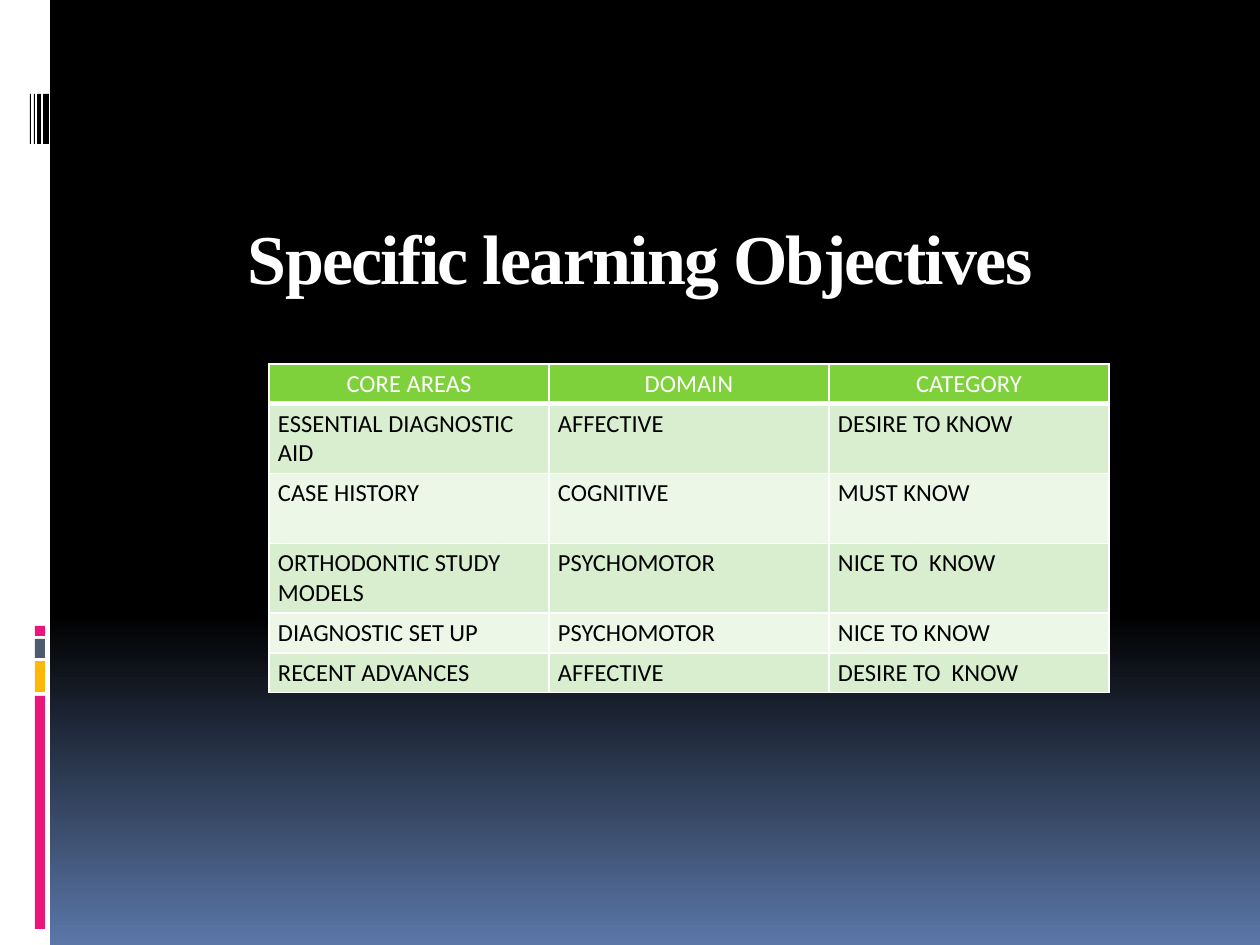
from copy import deepcopy

from lxml.etree import SubElement
from pptx import Presentation
from pptx.dml.color import RGBColor
from pptx.enum.shapes import MSO_SHAPE as Shape
from pptx.enum.text import MSO_ANCHOR as Anchor, PP_ALIGN as Align
from pptx.oxml.ns import qn
from pptx.util import Emu, Pt

PX = 914400 / 126
WHITE = RGBColor(0xFF, 0xFF, 0xFF)
BLACK = RGBColor(0x00, 0x00, 0x00)
BLUE = RGBColor(0x5B, 0x77, 0xA8)
PINK = RGBColor(0xEA, 0x15, 0x7A)
AMBER = RGBColor(0xFE, 0xB8, 0x0A)
SLATE = RGBColor(0x4E, 0x5B, 0x6F)
GREEN = RGBColor(0x7F, 0xD1, 0x3B)
MID_GREEN = RGBColor(0xD8, 0xEE, 0xCE)
PALE_GREEN = RGBColor(0xEC, 0xF7, 0xE8)

OBJECTIVES = [
    ("CORE AREAS", "DOMAIN", "CATEGORY"),
    ("ESSENTIAL DIAGNOSTIC AID", "AFFECTIVE", "DESIRE TO KNOW"),
    ("CASE HISTORY", "COGNITIVE", "MUST KNOW"),
    ("ORTHODONTIC STUDY MODELS", "PSYCHOMOTOR", "NICE TO  KNOW"),
    ("DIAGNOSTIC SET UP", "PSYCHOMOTOR", "NICE TO KNOW"),
    ("RECENT ADVANCES", "AFFECTIVE", "DESIRE TO  KNOW"),
]
ROW_HEIGHTS = [39, 69, 70, 69, 39, 39]


def px(*lengths):
    return [Emu(round(length * PX)) for length in lengths]


class SlideBuilder:
    title_font = "Times New Roman"
    body_font = "Calibri"

    def __init__(self, deck):
        self.slide = deck.slides.add_slide(deck.slide_layouts[5])

    def background(self, top, bottom, hold):
        """Vertical gradient that keeps the top colour down to hold."""
        fill = self.slide.background.fill
        fill.gradient()
        fill.gradient_angle = 270
        for stop, color, position in zip(fill.gradient_stops, (top, bottom), (0, 1)):
            stop.color.rgb = color
            stop.position = position
        stops = self.slide.element.find(".//" + qn("a:gsLst"))
        middle = deepcopy(stops[0])
        middle.set("pos", str(hold * 1000))
        stops.insert(1, middle)

    def bar(self, left, top, width, height, color):
        shape = self.slide.shapes.add_shape(Shape.RECTANGLE, *px(left, top, width, height))
        shape.shadow.inherit = False
        shape.fill.solid()
        shape.fill.fore_color.rgb = color
        shape.line.fill.background()

    def format_text(self, para, font, size, color, bold=False):
        for run in para.runs:
            run.font.name = font
            run.font.size = Pt(size)
            run.font.bold = bold
            run.font.color.rgb = color

    def title(self, text, left, top, width, height):
        box = self.slide.shapes.title
        box.left, box.top, box.width, box.height = px(left, top, width, height)
        frame = box.text_frame
        frame.text = text
        frame.word_wrap = True
        frame.vertical_anchor = Anchor.MIDDLE
        para = frame.paragraphs[0]
        para.alignment = Align.CENTER
        self.format_text(para, self.title_font, 40, WHITE, bold=True)
        para.runs[0].font._element.set("spc", "-100")

    def border(self, cell, side, points):
        line = SubElement(cell._tc.get_or_add_tcPr(), qn("a:ln" + side), w=str(Pt(points)))
        fill = SubElement(line, qn("a:solidFill"))
        SubElement(fill, qn("a:srgbClr"), val=str(WHITE))

    def cell(self, cell, text, fill, color, align, bottom):
        for side, points in (("L", 1), ("R", 1), ("T", 1), ("B", bottom)):
            self.border(cell, side, points)
        cell.fill.solid()
        cell.fill.fore_color.rgb = fill
        cell.margin_left, cell.margin_right = px(9, 9)
        cell.margin_top, cell.margin_bottom = px(5, 5)
        cell.text = text
        para = cell.text_frame.paragraphs[0]
        para.alignment = align
        self.format_text(para, self.body_font, 14, color)

    def table(self, rows, left, top, column_width, heights):
        columns = len(rows[0])
        table = self.slide.shapes.add_table(
            len(rows), columns,
            *px(left, top, column_width * columns, sum(heights))).table
        for column in table.columns:
            column.width = px(column_width)[0]
        for index, (values, height) in enumerate(zip(rows, heights)):
            table.rows[index].height = px(height)[0]
            if index == 0:
                style = GREEN, WHITE, Align.CENTER, 3
            else:
                band = MID_GREEN if index % 2 else PALE_GREEN
                style = band, BLACK, Align.LEFT, 1
            for column, text in enumerate(values):
                self.cell(table.cell(index, column), text, *style)


def main():
    deck = Presentation()
    deck.slide_width, deck.slide_height = px(1260, 945)
    page = SlideBuilder(deck)
    page.background(BLACK, BLUE, hold=65)

    # Side strip with coloured blocks and thin black stripes
    page.bar(0, 0, 50, 945, WHITE)
    for top, height, color in [(696, 233, PINK), (661, 31, AMBER),
                               (639, 19, SLATE), (626, 10, PINK)]:
        page.bar(35, top, 10, height, color)
    for left, width in [(43, 6), (37, 4), (34, 1), (30, 1)]:
        page.bar(left, 94, width, 50, BLACK)

    # Heading and objectives
    page.title("Specific learning Objectives ", 169, 200, 958, 114)
    page.table(OBJECTIVES, 269, 364, 280, ROW_HEIGHTS)
    deck.save("out.pptx")


if __name__ == "__main__":
    main()
